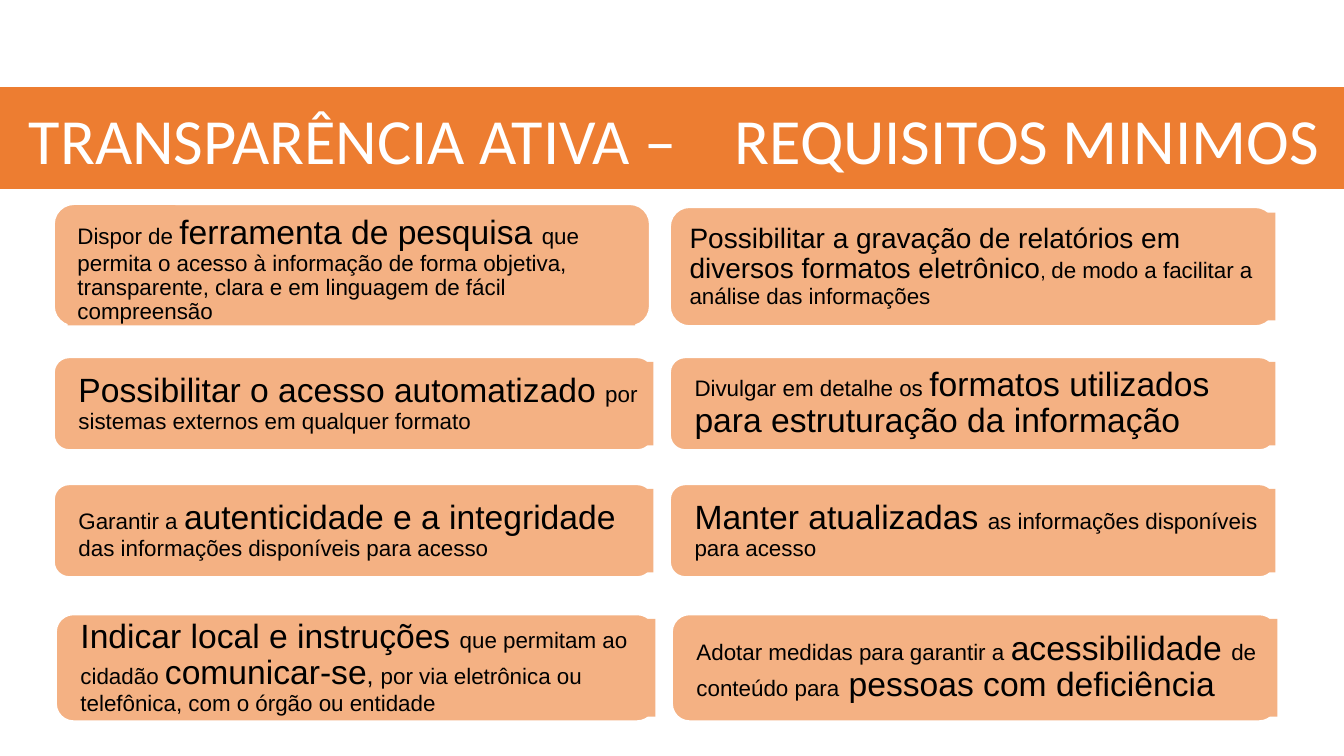
import pptx
import pptx.util
import pptx.dml.color
import pptx.enum.shapes
import pptx.enum.text

Inches = pptx.util.Inches

TITLE = "TRANSPARÊNCIA ATIVA – \tREQUISITOS MINIMOS"

# Each requirement is a list of (text, size name); each row holds a left and a right one.
REQUIREMENTS = [
    (
        [("Dispor de ", "body"), ("ferramenta de pesquisa ", "key"),
         ("que permita o acesso à informação de forma objetiva, transparente, "
          "clara e em linguagem de fácil compreensão", "body")],
        [("Possibilitar a gravação de relatórios em diversos formatos eletrônico", "long_key"),
         (", ", "small"), ("de modo a facilitar a análise das informações", "body")],
    ),
    (
        [("Possibilitar o acesso automatizado ", "key"),
         ("por sistemas externos em qualquer formato", "body")],
        [("Divulgar em detalhe os ", "body"),
         ("formatos utilizados para estruturação da informação", "key")],
    ),
    (
        [("Garantir a ", "body"), ("autenticidade e a integridade ", "key"),
         ("das informações disponíveis para acesso", "body")],
        [("Manter atualizadas ", "key"),
         ("as informações disponíveis para acesso", "body")],
    ),
    (
        [("Indicar local e instruções ", "key"), ("que permitam ao cidadão ", "body"),
         ("comunicar-se", "key"), (", ", "comma"),
         ("por via eletrônica ou telefônica, com o órgão ou entidade", "body")],
        [("Adotar medidas para garantir a ", "body"), ("acessibilidade ", "key"),
         ("de conteúdo para", "body"), (" pessoas com deficiência", "key")],
    ),
]

THEME = {
    "band": "ED7D31", "card": "F4B183", "white": "FFFFFF", "text": "000000",
    "title_font": "Calibri", "body_font": "Arial",
    "sizes": {"title": 46, "key": 24, "long_key": 20, "comma": 18, "body": 16, "small": 14},
}

# The top row is taller, so its (card, label) boxes are given whole.
TOP_ROW = [
    ((0.53, 2.02, 5.92, 1.22), (0.67, 2.13, 5.63, 1.1)),
    ((6.64, 2.05, 6.01, 1.19), (6.74, 2.11, 5.91, 1.07)),
]
COLUMNS = [(0.53, 5.95), (6.64, 6.01)]  # left, width
LOWER_ROWS = [(3.54, 0.93, 0), (4.8, 0.93, 0), (6.09, 1.07, 0.02)]  # top, height, shift
LABEL_INDENT, LABEL_MARGIN = 0.15, 0.05


def card_boxes(row, column):
    """Return the boxes of the rounded card and of its square-cornered label."""
    if row == 0:
        return TOP_ROW[column]
    left, width = COLUMNS[column]
    top, height, shift = LOWER_ROWS[row - 1]
    left += shift
    card = (left, top, width, height)
    label = (left + LABEL_INDENT, top + LABEL_MARGIN,
             width - LABEL_INDENT, height - 2 * LABEL_MARGIN)
    return card, label


def color(name):
    return pptx.dml.color.RGBColor.from_string(THEME[name])


def add_block(slide, kind, box, fill, line_width=None):
    block = slide.shapes.add_shape(kind, *map(Inches, box))
    block.shadow.inherit = False
    block.fill.solid()
    block.fill.fore_color.rgb = color(fill)
    if line_width is None:
        block.line.fill.background()
    else:
        block.line.color.rgb = color("white")
        block.line.width = pptx.util.Pt(line_width)
    return block


def set_all(target, values):
    for name, value in values.items():
        setattr(target, name, value)


def write(frame, runs, font, font_color, align, anchor, side_margin, end_margin):
    set_all(frame, {
        "word_wrap": True,
        "auto_size": pptx.enum.text.MSO_AUTO_SIZE.NONE,
        "vertical_anchor": anchor,
        "margin_left": Inches(side_margin), "margin_right": Inches(side_margin),
        "margin_top": Inches(end_margin), "margin_bottom": Inches(end_margin),
    })
    paragraph = frame.paragraphs[0]
    paragraph.alignment = align
    for text, size in runs:
        run = paragraph.add_run()
        run.text = text
        set_all(run.font, {"name": THEME[font], "size": pptx.util.Pt(THEME["sizes"][size])})
        run.font.color.rgb = color(font_color)
    return paragraph


def add_requirement(slide, runs, card, label):
    shapes = pptx.enum.shapes.MSO_SHAPE
    add_block(slide, shapes.ROUNDED_RECTANGLE, card, "card", 2)
    requirement = add_block(slide, shapes.RECTANGLE, label, "card")
    paragraph = write(requirement.text_frame, runs, "body_font", "text",
                      pptx.enum.text.PP_ALIGN.LEFT, pptx.enum.text.MSO_ANCHOR.MIDDLE, 0.1, 0.1)
    paragraph.line_spacing = 0.9


def add_title(slide):
    add_block(slide, pptx.enum.shapes.MSO_SHAPE.RECTANGLE, (-0.3, 0.86, 13.88, 1.02), "band", 1)
    title = slide.shapes.title
    set_all(title, {"left": Inches(-0.21), "top": Inches(0.94),
                    "width": Inches(13.79), "height": Inches(0.91)})
    write(title.text_frame, [(TITLE, "title")], "title_font", "white",
          pptx.enum.text.PP_ALIGN.CENTER, pptx.enum.text.MSO_ANCHOR.TOP, 0.1, 0.05)
    # The title goes in front of its band.
    title._element.getparent().append(title._element)


def main():
    deck = pptx.Presentation()
    deck.slide_width, deck.slide_height = Inches(13.33), Inches(7.5)
    slide = deck.slides.add_slide(deck.slide_layouts[5])
    for row, pair in enumerate(REQUIREMENTS):
        for column, runs in enumerate(pair):
            add_requirement(slide, runs, *card_boxes(row, column))
    add_title(slide)
    deck.save("out.pptx")


if __name__ == "__main__":
    main()
